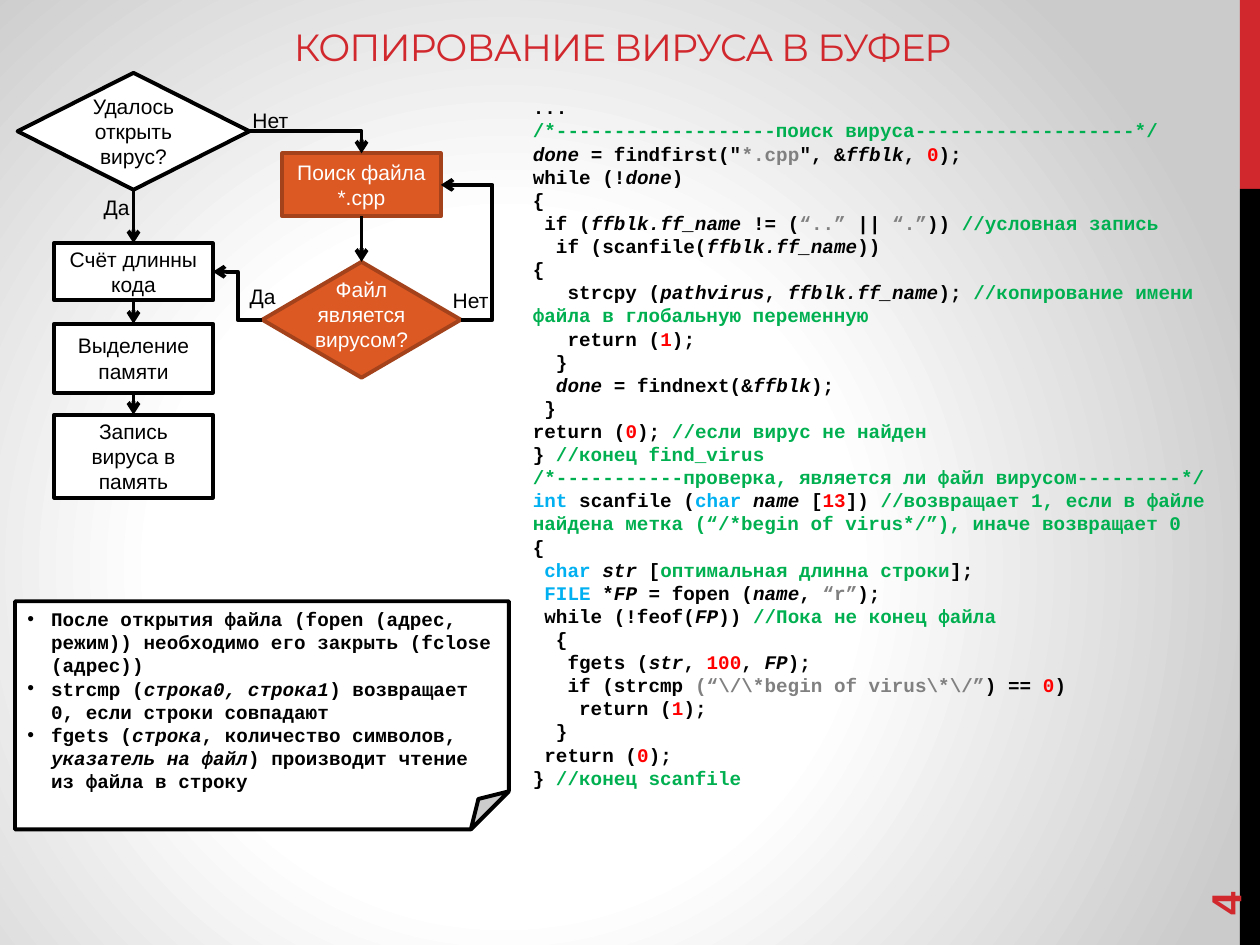
from pptx import Presentation
from pptx.dml.color import RGBColor
from pptx.enum import shapes, text
from pptx.oxml import parse_xml
from pptx.oxml.ns import nsdecls
from pptx.util import Pt

RED, BLACK, WHITE, ORANGE, RUST = "D1282E", "000000", "FFFFFF", "DC5924", "A3421B"
SHAPE, ALIGN, ANCHOR = shapes.MSO_SHAPE, text.PP_ALIGN, text.MSO_ANCHOR
LINE_WIDTH = 2.25

# Run styles of the listing
VAR = {"italic": True}
NOTE, NUM, STR, TYPE = ({"color": c} for c in ("00B050", "FF0000", "808080", "00B0F0"))

# Content: a paragraph is a list of plain strings and (string, style) pairs
TITLE = "КОПИРОВАНИЕ ВИРУСА В БУФЕР"
CODE = [
    ["..."],
    [("/*-------------------поиск вируса-------------------*/", NOTE)],
    [("done ", VAR), '= findfirst("', ("*.cpp", STR), '", &', ("ffblk", VAR), ", ",
     ("0", NUM), ");"],
    ["while (!", ("done", VAR), ")"],
    ["{"],
    [" if (", ("ffblk.ff_name ", VAR), "!= (", ("“..” ", STR), "|| ", ("“.”", STR), "))",
     (" //условная запись", NOTE)],
    ["  if (scanfile(", ("ffblk.ff_name", VAR), "))"],
    ["{"],
    ["   strcpy (", ("pathvirus", VAR), ", ", ("ffblk.ff_name", VAR), "); ",
     ("//копирование имени файла в глобальную переменную", NOTE)],
    ["   return (", ("1", NUM), ");"],
    ["  }"],
    ["  ", ("done ", VAR), "= findnext(&", ("ffblk", VAR), ");"],
    [" }"],
    ["return (", ("0", NUM), "); ", ("//если вирус не найден", NOTE)],
    ["} ", ("//конец find_virus", NOTE)],
    [("/*-----------проверка, является ли файл вирусом---------*/", NOTE)],
    [("int ", TYPE), "scanfile (", ("char ", TYPE), ("name", VAR), " [", ("13", NUM), "]) ",
     ("//возвращает 1, если в файле найдена метка (“/*begin of virus*/”), "
      "иначе возвращает 0", NOTE)],
    ["{"],
    [" ", ("char ", TYPE), ("str", VAR), " [", ("оптимальная длинна строки", NOTE), "];"],
    [" ", ("FILE", TYPE), " *", ("FP", VAR), " = fopen (", ("name", VAR), ", ",
     ("“r”", STR), ");"],
    [" while (!feof(", ("FP", VAR), ")) ", ("//Пока не конец файла", NOTE)],
    ["  {"],
    ["   fgets (", ("str", VAR), ", ", ("100", NUM), ", ", ("FP", VAR), ");"],
    ["   if (strcmp ", (r"(“\/\*begin of virus\*\/”", STR), ") == ", ("0", NUM), ")"],
    ["    return (", ("1", NUM), ");"],
    ["  }"],
    [" return (", ("0", NUM), ");"],
    ["} ", ("//конец scanfile", NOTE)],
]
REMARKS = [
    ["После открытия файла (fopen (адрес, режим)) необходимо его закрыть (fclose (адрес))"],
    ["strcmp (", ("строка0, строка1", VAR), ") возвращает 0, если строки совпадают"],
    ["fgets (", ("строка", VAR), ", количество символов, ", ("указатель на файл", VAR),
     ") производит чтение из файла в строку"],
]

# Flowchart: name -> text, preset, centre x, top, width, height, colours
PLAIN, HOT = (WHITE, BLACK, BLACK), (ORANGE, RUST, WHITE)  # fill, line, text
LEFT, RIGHT, BOX_W = 76.3, 206.6, 90.7
NODES = {
    "opened": ("Удалось открыть вирус?", SHAPE.FLOWCHART_DECISION, LEFT, 41.6, 132.5, 66.8, PLAIN),
    "length": ("Счёт длинны кода", SHAPE.RECTANGLE, LEFT, 139, BOX_W, 32.6, PLAIN),
    "memory": ("Выделение памяти", SHAPE.RECTANGLE, LEFT, 185, BOX_W, 39.4, PLAIN),
    "record": ("Запись вируса в память", SHAPE.RECTANGLE, LEFT, 237, BOX_W, 47.4, PLAIN),
    "search": ("Поиск файла *.cpp", SHAPE.RECTANGLE, RIGHT, 87.7, BOX_W, 36, HOT),
    "is_virus": ("Файл является вирусом?", SHAPE.FLOWCHART_DECISION, RIGHT, 149.6, 113.4, 66.2, HOT),
}
# from, side, to, side, preset, x of the middle leg (None: halfway)
LINKS = [
    ("opened", "bottom", "length", "top", "line", None),
    ("length", "bottom", "memory", "top", "line", None),
    ("memory", "bottom", "record", "top", "line", None),
    ("search", "bottom", "is_virus", "top", "line", None),
    ("opened", "right", "search", "top", "bentConnector2", None),
    ("is_virus", "left", "length", "right", "bentConnector3", None),
    ("is_virus", "right", "search", "right", "bentConnector3", 281.5),
]
LABELS = [("Да", 47.5, 105.1), ("Да", 131, 156.2), ("Нет", 135.4, 55.4), ("Нет", 249.8, 158.4)]


def rgb(value):
    return RGBColor.from_string(value)


def put_text(sp, paras, size=12, font="Arial", color=BLACK, bold=False, align=ALIGN.LEFT,
             anchor=ANCHOR.TOP, inset=(7.2, 3.6, 7.2, 3.6), spacing=None, bullet=False):
    tf = sp.text_frame
    tf.word_wrap = True
    tf.vertical_anchor = anchor
    tf.margin_left, tf.margin_top, tf.margin_right, tf.margin_bottom = map(Pt, inset)
    for i, runs in enumerate([[paras]] if isinstance(paras, str) else paras):
        p = tf.paragraphs[0] if i == 0 else tf.add_paragraph()
        p.alignment = align
        if bullet:
            pPr = p._p.get_or_add_pPr()
            pPr.set("marL", str(Pt(13.5)))
            pPr.set("indent", str(-Pt(13.5)))
            pPr.append(parse_xml(f'<a:buFont {nsdecls("a")} typeface="Arial"/>'))
            pPr.append(parse_xml(f'<a:buChar {nsdecls("a")} char="•"/>'))
        for run in runs:
            content, style = (run, {}) if isinstance(run, str) else run
            r = p.add_run()
            r.text = content
            r.font.size, r.font.name, r.font.bold = Pt(size), font, bold
            r.font.italic = style.get("italic", False)
            r.font.color.rgb = rgb(style.get("color", color))
            if spacing:
                r._r.get_or_add_rPr().set("spc", str(round(spacing * 100)))


def add_box(s, preset, box, fill, line=None):
    sp = s.shapes.add_shape(preset, *map(Pt, box))
    sp.shadow.inherit = False
    sp.fill.solid()
    sp.fill.fore_color.rgb = rgb(fill)
    if line:
        sp.line.color.rgb = rgb(line)
        sp.line.width = Pt(LINE_WIDTH)
    else:
        sp.line.fill.background()
    return sp


def add_label(s, content, box, **fmt):
    sp = s.shapes.add_textbox(*map(Pt, box))
    put_text(sp, content, **fmt)
    return sp


def side_point(name, side):
    _, _, cx, top, w, h, _ = NODES[name]
    return {"top": (cx, top), "bottom": (cx, top + h),
            "left": (cx - w / 2, top + h / 2), "right": (cx + w / 2, top + h / 2)}[side]


def add_arrow(s, start, end, preset, middle):
    kind = shapes.MSO_CONNECTOR.STRAIGHT if preset == "line" else shapes.MSO_CONNECTOR.ELBOW
    c = s.shapes.add_connector(kind, *map(Pt, start + end))
    c.line.color.rgb = rgb(BLACK)
    c.line.width = Pt(LINE_WIDTH)
    c.line._get_or_add_ln().append(parse_xml(f'<a:tailEnd {nsdecls("a")} type="arrow"/>'))
    spPr = c._element.spPr
    spPr.append(parse_xml(f'<a:effectLst {nsdecls("a")}/>'))
    spPr.prstGeom.set("prst", preset)
    if middle is not None:
        adj = round((middle - start[0]) / (end[0] - start[0]) * 100000)
        spPr.prstGeom.get_or_add_avLst().append(
            parse_xml(f'<a:gd {nsdecls("a")} name="adj1" fmla="val {adj}"/>'))


def set_background(s):
    stops = "".join(f'<a:gs pos="{pos * 1000}"><a:srgbClr val="{c}"/></a:gs>'
                    for pos, c in ((0, WHITE), (44, WHITE), (100, "CBCBCB")))
    s._element.cSld.insert(0, parse_xml(
        f'<p:bg {nsdecls("p", "a")}><p:bgPr><a:gradFill rotWithShape="1">'
        f'<a:gsLst>{stops}</a:gsLst><a:path path="circle">'
        '<a:fillToRect l="40000" t="60000" r="60000" b="40000"/></a:path>'
        '</a:gradFill><a:effectLst/></p:bgPr></p:bg>'))


def main():
    prs = Presentation()
    prs.slide_width, prs.slide_height = Pt(720), Pt(540)
    s = prs.slides.add_slide(prs.slide_layouts[6])
    set_background(s)

    # Side bar
    add_box(s, SHAPE.RECTANGLE, (708.5, 0, 11.5, 108), RED)
    add_box(s, SHAPE.RECTANGLE, (708.5, 108, 11.5, 432), BLACK)

    # Title, listing, remarks and page number
    add_label(s, TITLE, (0, 12.2, 711.4, 31), size=21.6, font="Montserrat", color=RED,
              align=ALIGN.CENTER, anchor=ANCHOR.BOTTOM, spacing=-0.6)
    add_label(s, CODE, (297.4, 51.1, 408.2, 485.3), size=11, font="Courier New", bold=True)
    remarks = add_box(s, SHAPE.FOLDED_CORNER, (8.6, 343.6, 282.2, 130.4), WHITE, BLACK)
    put_text(remarks, REMARKS, size=11, font="Courier New", bold=True, bullet=True)
    number = add_label(s, "4", (648, 463.7, 103.7, 28.8), size=24, color=RED, bold=True,
                       anchor=ANCHOR.MIDDLE)
    number.rotation = 270

    # Flowchart
    for name, (content, preset, cx, top, w, h, (fill, line, color)) in NODES.items():
        sp = add_box(s, preset, (cx - w / 2, top, w, h), fill, line)
        fmt = {"anchor": ANCHOR.MIDDLE}
        if name == "is_virus":
            fmt = {"anchor": ANCHOR.BOTTOM, "inset": (0, 36.7, 0, 0)}
        put_text(sp, content, color=color, align=ALIGN.CENTER, **fmt)
    for a, a_side, b, b_side, preset, middle in LINKS:
        add_arrow(s, side_point(a, a_side), side_point(b, b_side), preset, middle)
    for content, x, y in LABELS:
        add_label(s, content, (x, y, 38.2, 26.6), align=ALIGN.CENTER, anchor=ANCHOR.MIDDLE)

    prs.save("out.pptx")


if __name__ == "__main__":
    main()
